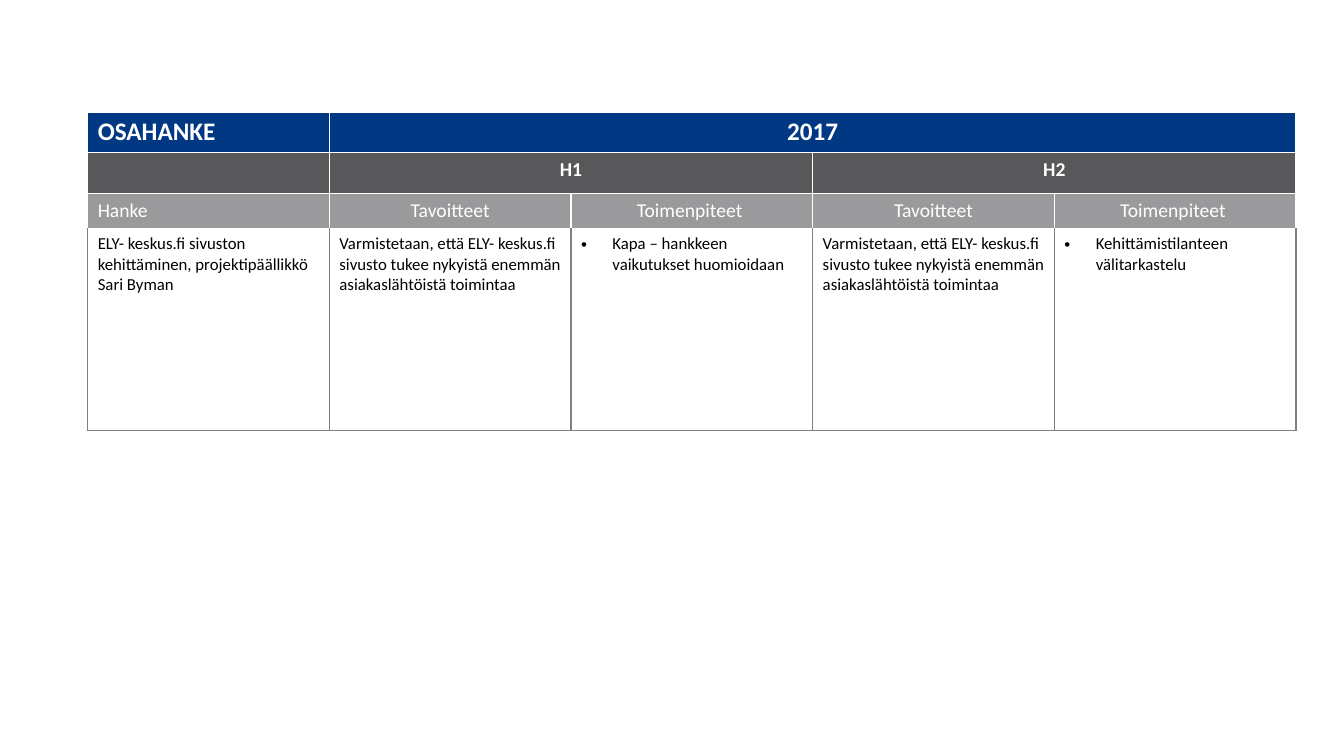
from dataclasses import dataclass

from lxml import etree
from pptx import Presentation
from pptx.dml.color import RGBColor
from pptx.enum import text
from pptx.oxml import ns
from pptx.util import Cm, Pt


@dataclass(frozen=True)
class Theme:
    font: str = "Calibri"
    navy: str = "003883"
    dark: str = "58585A"
    mid: str = "9A9A9D"
    line: str = "808080"
    white: str = "FFFFFF"
    black: str = "000000"
    head: int = 18
    sub: int = 14
    body: int = 12


def border(cell, sides, color):
    """Append 1 pt cell borders, to be called before the fill is set."""
    props = cell._tc.get_or_add_tcPr()
    for side in sides:
        line = etree.SubElement(props, ns.qn("a:ln" + side), w=str(Pt(1)))
        fill = etree.SubElement(line, ns.qn("a:solidFill"))
        etree.SubElement(fill, ns.qn("a:srgbClr"), val=color)


def bullet(para):
    """Give the paragraph a hanging round bullet."""
    props = para._p.get_or_add_pPr()
    props.set("marL", str(Cm(0.79)))
    props.set("indent", str(-Cm(0.79)))
    etree.SubElement(props, ns.qn("a:buFont"), typeface="Arial")
    etree.SubElement(props, ns.qn("a:buChar"), char="•")


theme = Theme()
prs = Presentation()
prs.slide_width, prs.slide_height = Cm(33.87), Cm(19.05)
slide = prs.slides.add_slide(prs.slide_layouts[6])

goal = ("Varmistetaan, että ELY- keskus.fi sivusto tukee nykyistä "
        "enemmän asiakaslähtöistä toimintaa")
project = "ELY- keskus.fi sivuston kehittäminen, projektipäällikkö Sari Byman"
halves = ["Tavoitteet", "Toimenpiteet "] * 2

# height, fill, text colour, size, bold, cell texts
rows = [
    (1.03, theme.navy, theme.white, theme.head, True,
     ["OSAHANKE", "2017", "", "", ""]),
    (1.03, theme.dark, theme.white, theme.sub, True,
     ["", "H1", "", "H2", ""]),
    (0.89, theme.mid, theme.white, theme.sub, False, ["Hanke"] + halves),
    (5.08, None, theme.black, theme.body, False,
     [project, goal, "Kapa – hankkeen vaikutukset huomioidaan",
      goal, "Kehittämistilanteen välitarkastelu"]),
]

wide, count = 6.09, 5
frame = slide.shapes.add_table(len(rows), count, Cm(2.21), Cm(2.82),
                               Cm(wide * count), Cm(sum(r[0] for r in rows)))
table = frame.table
for col in table.columns:
    col.width = Cm(wide)

for y, (height, fill, color, size, bold, words) in enumerate(rows):
    table.rows[y].height = Cm(height)
    for x, word in enumerate(words):
        cell = table.cell(y, x)
        if fill:
            border(cell, "LRTB", theme.white)
            cell.fill.solid()
            cell.fill.fore_color.rgb = RGBColor.from_string(fill)
        else:
            border(cell, "LR", theme.line)
            border(cell, "T", theme.white)
            border(cell, "B", theme.line)
            cell.fill.background()
        para = cell.text_frame.paragraphs[0]
        para.text = word
        if fill and x:
            para.alignment = text.PP_ALIGN.CENTER
        elif not fill and x in (2, 4):
            bullet(para)
        for run in para.runs:
            font = run.font
            font.name, font.size, font.bold = theme.font, Pt(size), bold
            font.color.rgb = RGBColor.from_string(color)

for y, first, last in [(0, 1, 4), (1, 1, 2), (1, 3, 4)]:
    table.cell(y, first).merge(table.cell(y, last))

prs.save("out.pptx")
